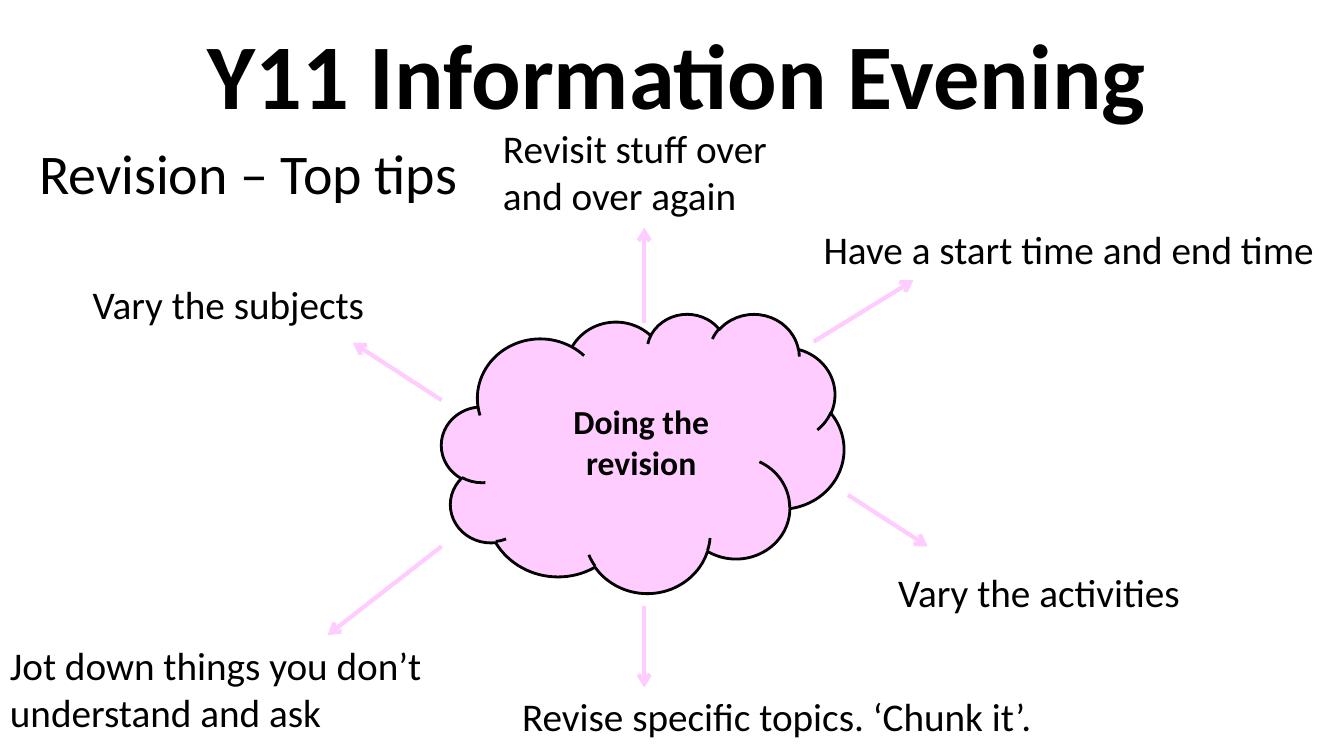
from lxml.etree import SubElement
from pptx import Presentation
from pptx.dml.color import RGBColor
from pptx.enum.shapes import MSO_CONNECTOR, MSO_SHAPE
from pptx.enum.text import MSO_AUTO_SIZE, PP_ALIGN
from pptx.oxml.ns import qn
from pptx.util import Inches, Pt

BLACK = RGBColor(0x00, 0x00, 0x00)
PINK = RGBColor(0xFF, 0xCC, 0xFF)
FONT = "Calibri"
TIP_SIZE = 28

CLOUD = (4.38, 3.11, 3.99, 2.77)

# text, box (left, top, width, height), size, bold, wrap, alignment
HEADINGS = [
    ("Y11 Information Evening", (1.96, 0.12, 9.61, 1.21), 66, True, False, PP_ALIGN.LEFT),
    ("Revision – Top tips", (0.29, 1.33, 4.39, 0.77), 40, False, False, PP_ALIGN.LEFT),
    ("Doing the revision", (5.1, 3.93, 2.52, 0.91), 24, True, True, PP_ALIGN.CENTER),
]

# text, box, wrap, arrow start, arrow end
TIPS = [
    ("Have a start time and end time", (8.07, 2.19, 5.12, 0.57), False, (8.07, 3.39), (9.06, 2.78)),
    ("Vary the activities", (8.81, 5.59, 3.03, 0.57), False, (8.41, 4.91), (9.2, 5.42)),
    ("Revise specific topics. ‘Chunk it’.", (5.08, 6.82, 5.31, 0.57), False, (6.39, 6.01), (6.39, 6.82)),
    ("Jot down things you don’t understand and ask", (0, 6.31, 4.38, 1.04), True, (4.38, 5.42), (3.25, 6.3)),
    ("Vary the subjects", (0.82, 2.73, 2.99, 0.57), True, (4.38, 3.97), (3.5, 3.4)),
    ("Revisit stuff over and over again", (4.89, 1.18, 3.48, 1.04), True, (6.39, 3.2), (6.39, 2.26)),
]


def inches(values):
    return [Inches(v) for v in values]


def add_text(slide, text, box, size, bold=False, wrap=True, align=PP_ALIGN.LEFT):
    tf = slide.shapes.add_textbox(*inches(box)).text_frame
    tf.word_wrap = wrap
    tf.auto_size = MSO_AUTO_SIZE.SHAPE_TO_FIT_TEXT
    p = tf.paragraphs[0]
    p.text = text
    p.alignment = align
    p.font.name = FONT
    p.font.size = Pt(size)
    p.font.bold = bold
    p.font.color.rgb = BLACK


def add_arrow(slide, start, end):
    arrow = slide.shapes.add_connector(MSO_CONNECTOR.STRAIGHT, *inches(start + end))
    arrow.line.color.rgb = PINK
    arrow.line.width = Pt(3)
    SubElement(arrow.line._get_or_add_ln(), qn("a:tailEnd"), type="arrow")
    SubElement(arrow._element.spPr, qn("a:effectLst"))


def add_cloud(slide):
    sp = slide.shapes.add_shape(MSO_SHAPE.CLOUD, *inches(CLOUD))
    sp.shadow.inherit = False
    sp.fill.solid()
    sp.fill.fore_color.rgb = PINK
    sp.line.color.rgb = BLACK
    sp.line.width = Pt(2)


def main():
    prs = Presentation()
    prs.slide_width, prs.slide_height = Inches(13.33), Inches(7.5)
    slide = prs.slides.add_slide(prs.slide_layouts[6])
    add_cloud(slide)
    for heading in HEADINGS:
        add_text(slide, *heading)
    for text, box, wrap, start, end in TIPS:
        add_arrow(slide, start, end)
        add_text(slide, text, box, TIP_SIZE, wrap=wrap)
    prs.save("out.pptx")


if __name__ == "__main__":
    main()
